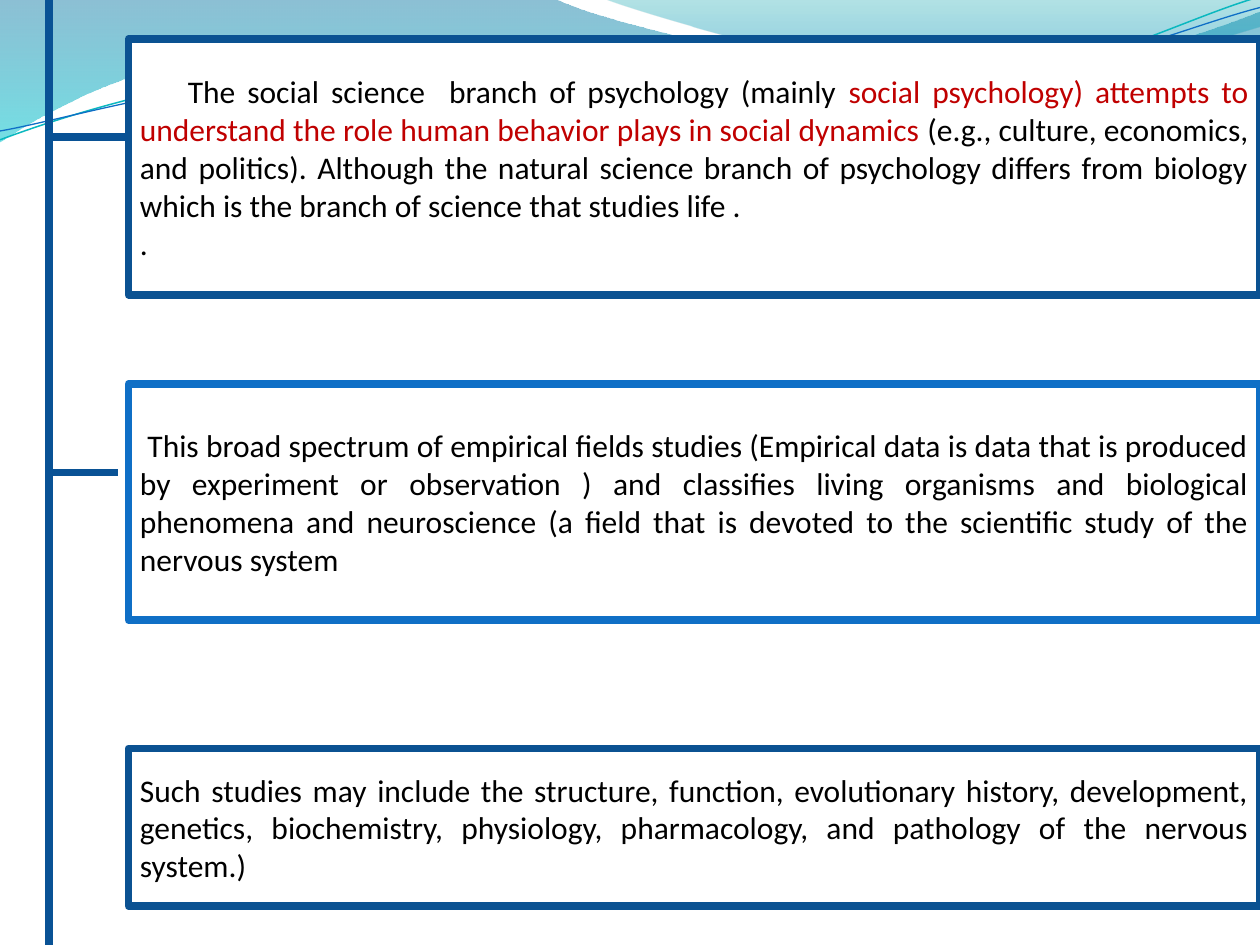
from dataclasses import dataclass
from math import cos, radians, sin
from lxml.etree import SubElement
from pptx import Presentation
from pptx.dml.color import RGBColor
from pptx.enum.shapes import MSO_CONNECTOR, MSO_SHAPE
from pptx.enum.text import MSO_ANCHOR, PP_ALIGN
from pptx.oxml.ns import qn
from pptx.util import Inches, Pt

WIDTH, HEIGHT = 10, 7.5


@dataclass(frozen=True)
class Theme:
    font: str = "Calibri"
    text_size: float = 18
    border: float = 4.5
    side_margin: float = 0.09
    ink: str = "000000"
    accent: str = "C00000"
    paper: str = "FFFFFF"
    navy: str = "0B5292"
    blue: str = "0F6FC6"
    trunk: str = "095295"
    teal: str = "0AB8BF"
    # Gradient stops: position %, colour, opacity %
    wave: tuple = ((0, "0074A1", 45), (100, "00C6CF", 55))
    crest: tuple = ((0, "00A1A9", 30), (80, "008BBF", 45))


THEME = Theme()


def add_outline(page, start, steps, closed):
    """Freeform of lines (one point) and cubic curves (two handles and a point)."""
    corners = [tuple(map(Inches, step[-1])) for step in steps]
    builder = page.shapes.build_freeform(*map(Inches, start))
    builder.add_line_segments(corners, close=closed)
    shape = builder.convert_to_shape()
    shape.shadow.inherit = False
    # Add the handles to the segments that are curves
    segments = list(shape._element.spPr.iter(qn("a:lnTo")))
    for segment, step in zip(segments, steps):
        if len(step) == 3:
            segment.tag = qn("a:cubicBezTo")
            for place, (x, y) in enumerate(step[:2]):
                handle = SubElement(segment, qn("a:pt"), x=str(Inches(x) - shape.left),
                                    y=str(Inches(y) - shape.top))
                segment.insert(place, handle)
    return shape


def add_wave(page, start, steps, stops):
    """Closed wave with a translucent top-to-bottom gradient."""
    shape = add_outline(page, start, steps, closed=True)
    shape.line.fill.background()
    shape.fill.gradient()
    gradient = shape._element.spPr.find(qn("a:gradFill"))
    for child in list(gradient):
        gradient.remove(child)
    stop_list = SubElement(gradient, qn("a:gsLst"))
    for position, color, opacity in stops:
        stop = SubElement(stop_list, qn("a:gs"), pos=str(position * 1000))
        tint = SubElement(stop, qn("a:srgbClr"), val=color)
        SubElement(tint, qn("a:alpha"), val=str(opacity * 1000))
    SubElement(gradient, qn("a:lin"), ang="5400000", scaled="0")


def add_strand(page, start, steps, center, color, weight, tilt=2.7):
    """Thin curve, laid level around its center and then tilted upwards."""
    def level(point):
        x, y = point[0] - center[0], point[1] - center[1]
        turn = radians(tilt)
        return (center[0] + x * cos(turn) - y * sin(turn),
                center[1] + x * sin(turn) + y * cos(turn))

    shape = add_outline(page, level(start), [tuple(map(level, step)) for step in steps],
                        closed=False)
    shape.rotation = 360 - tilt
    shape.fill.background()
    shape.line.color.rgb = RGBColor.from_string(color)
    shape.line.width = Pt(weight)


def add_header(page):
    """Waves and thin strands across the top of the page."""
    add_wave(page, (0, 0), (
        ((4.4, -0.01),), ((4.76, 0.17), (6.64, 0.63), (7.58, 0.63)),
        ((8.53, 0.63), (9.58, 0.26), (10, 0.09)), ((10.01, 0.36),),
        ((9.83, 0.44), (8.7, 0.76), (7.46, 0.75)),
        ((6.22, 0.75), (3.82, 0.28), (2.57, 0.34)),
        ((1.29, 0.36), (0.46, 0.83), (-0.01, 1.13)), ((0, 0),)), THEME.wave)
    add_wave(page, (4.79, -0.01), (
        ((5.09, 0.11), (6.82, 0.62), (7.69, 0.65)),
        ((8.56, 0.69), (9.61, 0.32), (10, 0.21)),
        ((10, 0),), ((4.79, -0.01),)), THEME.crest)
    add_strand(page, (0, 1.11), (
        ((0.48, 0.93), (1.58, 0.57), (2.77, 0.52)),
        ((3.95, 0.47), (5.93, 0.89), (7.13, 0.8)),
        ((8.33, 0.71), (9.38, 0.15), (9.98, -0.02))), (4.99, 0.57), THEME.teal, 0.85)
    add_strand(page, (0, 1.04), (
        ((0.47, 0.96), (1.64, 0.61), (2.83, 0.56)),
        ((4.03, 0.51), (5.97, 0.84), (7.17, 0.75)),
        ((8.36, 0.67), (9.41, 0.21), (10, 0.06))), (5, 0.59), THEME.blue, 0.75)


def add_span(para, text, *, color=THEME.ink, size=THEME.text_size):
    span = para.add_run()
    span.text = text
    span.font.name = THEME.font
    span.font.size = Pt(size)
    span.font.color.rgb = RGBColor.from_string(color)


def add_card(page, left, top, width, height, paragraphs, *, border, indent=0):
    """Bordered box of justified text; indent applies to the first line."""
    box = page.shapes.add_shape(MSO_SHAPE.RECTANGLE, *map(Inches, (left, top, width, height)))
    box.shadow.inherit = False
    box.fill.solid()
    box.fill.fore_color.rgb = RGBColor.from_string(THEME.paper)
    box.line.color.rgb = RGBColor.from_string(border)
    box.line.width = Pt(THEME.border)
    frame = box.text_frame
    frame.word_wrap = True
    frame.margin_left = frame.margin_right = Inches(THEME.side_margin)
    frame.vertical_anchor = MSO_ANCHOR.MIDDLE
    for number, spans in enumerate(paragraphs):
        para = frame.add_paragraph() if number else frame.paragraphs[0]
        para.alignment = PP_ALIGN.JUSTIFY
        if indent and not number:
            para._p.get_or_add_pPr().set("indent", str(Inches(indent)))
        for text, color in spans:
            add_span(para, text, color=color)


def add_rule(page, *ends):
    rule = page.shapes.add_connector(MSO_CONNECTOR.STRAIGHT, *map(Inches, ends))
    rule.line.color.rgb = RGBColor.from_string(THEME.trunk)
    rule.line.width = Pt(THEME.border)
    SubElement(rule._element.spPr, qn("a:effectLst"))


def add_tree(page, trunk, branches):
    """Vertical trunk with branches given as (height, right end)."""
    add_rule(page, trunk, 0, trunk, HEIGHT)
    for level, reach in branches:
        add_rule(page, trunk, level, reach, level)


def main():
    deck = Presentation()
    deck.slide_width, deck.slide_height = Inches(WIDTH), Inches(HEIGHT)
    page = deck.slides.add_slide(deck.slide_layouts[6])
    add_header(page)

    # Text cards share one left edge and run to the right edge of the page
    left = 1.02
    cards = (
        (0.31, 2.03, THEME.navy, 0.38, [
            [("The social science  branch of psychology (mainly ", THEME.ink),
             ("social psychology) attempts to understand the role human behavior "
              "plays in social dynamics ", THEME.accent),
             ("(e.g., culture, economics, and politics). Although the natural science "
              "branch of psychology differs from biology which is the branch of "
              "science that studies life .", THEME.ink)],
            [(".", THEME.ink)]]),
        (3.05, 1.87, THEME.blue, 0.06, [
            [("This broad spectrum of empirical fields studies (Empirical data is data "
              "that is produced by experiment or observation ) and classifies living "
              "organisms and biological phenomena and neuroscience (a field that is "
              "devoted to the scientific study of the nervous system", THEME.ink)]]),
        (5.94, 1.25, THEME.navy, 0, [
            [("Such studies may include the structure, function, evolutionary history, "
              "development, genetics, biochemistry, physiology, pharmacology, and "
              "pathology of the nervous system.)", THEME.ink)]]),
    )
    for top, height, border, indent, paragraphs in cards:
        add_card(page, left, top, WIDTH - left, height, paragraphs,
                 border=border, indent=indent)

    add_tree(page, 0.39, ((1.09, left), (3.75, 0.94)))
    deck.save("out.pptx")


if __name__ == "__main__":
    main()
